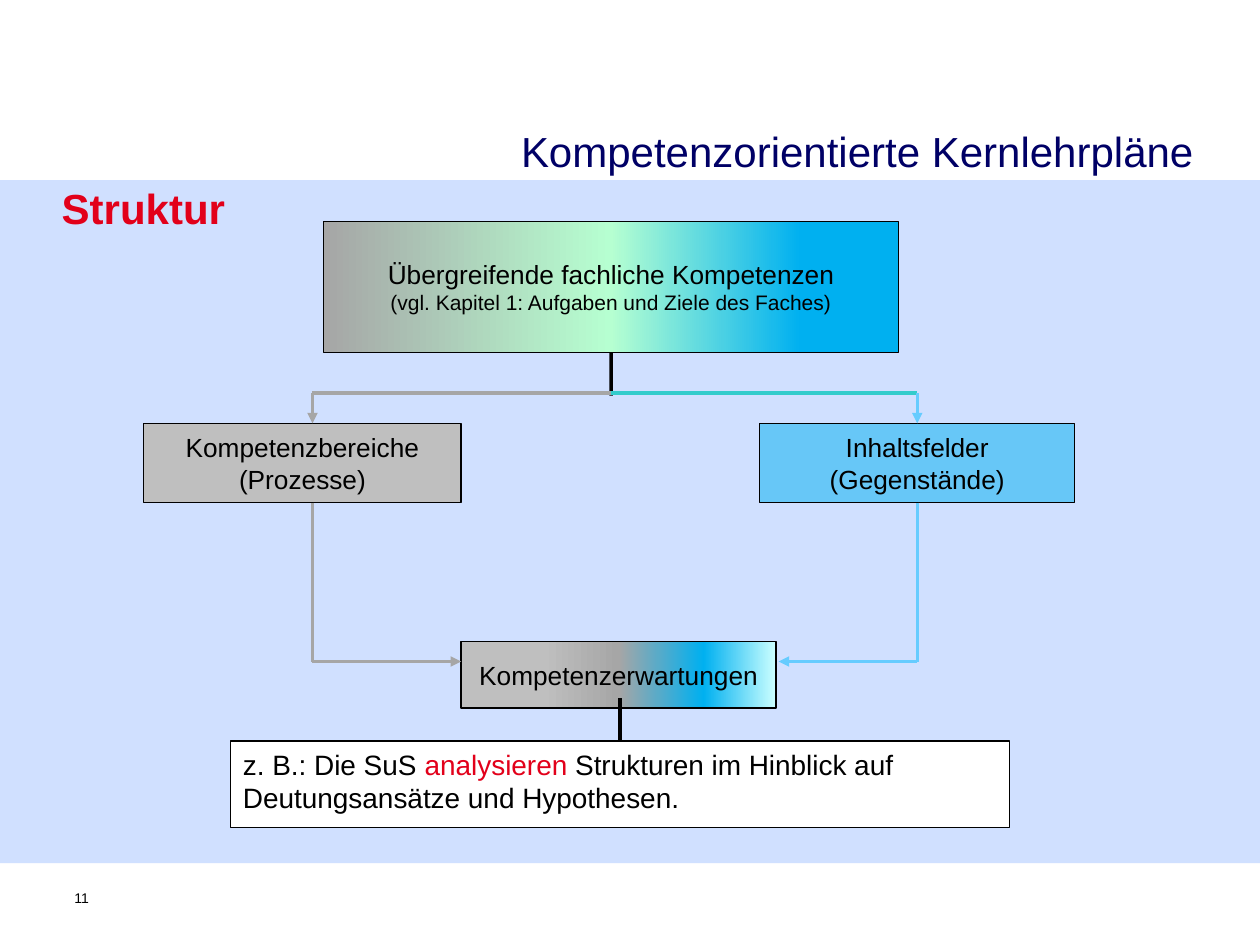
"""Build the slide on the structure of competence-oriented core curricula."""
from lxml import etree
from pptx import Presentation
from pptx.dml.color import RGBColor
from pptx.enum.shapes import MSO_CONNECTOR as Connector, MSO_SHAPE as Shape
from pptx.enum.text import MSO_ANCHOR as Anchor, PP_ALIGN as Align
from pptx.oxml import parse_xml
from pptx.oxml.ns import nsdecls, qn
from pptx.util import Inches, Pt

BLACK, WHITE, RED, NAVY = "000000", "FFFFFF", "E2001A", "000066"
GREY, SILVER, SKY, TEAL, BLUE = "A6A6A6", "BFBFBF", "66CCFF", "33CCCC", "00B0F0"
LEFT_X, TRUNK_X, RIGHT_X, EXAMPLE_X = 2.48, 4.85, 7.28, 4.92
FORK_Y, AREA_Y, AREA_END, MERGE_Y = 3.12, 3.36, 3.99, 5.25
TOP, BOTTOM = 0, 2

BAND = ((0, 1.43, 10, 5.42), ("6699FF", 30))

# name: (position, fill, anchor, alignment, top inset, paragraphs of (text, size, colour) runs)
BOXES = {
    "overall": ((2.57, 1.76, 4.56, 1.04), [(0, GREY), (50, "B6FFD1"), (83, BLUE)],
                Anchor.TOP, Align.CENTER, 0.29,
                [[("Übergreifende fachliche Kompetenzen", 15, BLACK)],
                 [("(vgl. Kapitel 1: Aufgaben und Ziele des Faches)", 12, BLACK)]]),
    "processes": ((1.14, AREA_Y, 2.52, AREA_END - AREA_Y), (SILVER, 100),
                  Anchor.MIDDLE, Align.CENTER, 0.05,
                  [[("Kompetenzbereiche", 15, BLACK)], [("(Prozesse)", 15, BLACK)]]),
    "contents": ((6.03, AREA_Y, 2.5, AREA_END - AREA_Y), (BLUE, 50),
                 Anchor.MIDDLE, Align.CENTER, 0.05,
                 [[("Inhaltsfelder", 15, BLACK)], [("(Gegenstände)", 15, BLACK)]]),
    "expectations": ((3.66, 5.09, 2.5, 0.53),
                     [(0, SILVER), (26, SILVER), (50, GREY), (77, BLUE), (100, "CCFFFF")],
                     Anchor.MIDDLE, Align.CENTER, 0.05,
                     [[("Kompetenzerwartungen", 15, BLACK)]]),
    "example": ((1.83, 5.88, 6.18, 0.69), (WHITE, 100), Anchor.TOP, Align.LEFT, 0.05,
                [[("z. B.: Die SuS ", 16, BLACK), ("analysieren ", 16, RED),
                  ("Strukturen im Hinblick auf Deutungsansätze und Hypothesen.", 16, BLACK)]]),
}

# (position, anchor, alignment, inset, bold, run)
LABELS = [
    ((0.49, 1.41, 8.66, 0.47), Anchor.MIDDLE, Align.LEFT, 0, True, ("Struktur", 24, RED)),
    ((3.54, 0.95, 6.03, 0.51), Anchor.TOP, Align.RIGHT, 0.1, False,
     ("Kompetenzorientierte Kernlehrpläne", 24, NAVY)),
    ((0.59, 7.06, 0.32, 0.37), Anchor.TOP, Align.LEFT, 0, False, ("11", 8, BLACK)),
]

# (start, end, colour, arrow, joined start, joined end)
LINES = [
    ((TRUNK_X, 2.8), (TRUNK_X, 3.14), BLACK, False, ("overall", BOTTOM), None),
    ((TRUNK_X, FORK_Y), (LEFT_X, FORK_Y), GREY, False, None, None),
    ((TRUNK_X, FORK_Y), (RIGHT_X, FORK_Y), TEAL, False, None, None),
    ((LEFT_X, FORK_Y), (LEFT_X, AREA_Y), GREY, True, None, None),
    ((RIGHT_X, FORK_Y), (RIGHT_X, AREA_Y), SKY, True, None, ("contents", TOP)),
    ((LEFT_X, AREA_END), (LEFT_X, MERGE_Y), GREY, False, None, None),
    ((RIGHT_X, AREA_END), (RIGHT_X, MERGE_Y), SKY, False, ("contents", BOTTOM), None),
    ((LEFT_X, MERGE_Y), (3.66, MERGE_Y), GREY, True, None, None),
    ((RIGHT_X, MERGE_Y), (6.18, MERGE_Y), SKY, True, None, None),
    ((EXAMPLE_X, 5.54), (EXAMPLE_X, 5.88), BLACK, False, None, ("example", TOP)),
]


def rgb(value):
    return RGBColor.from_string(value)


def inches(values):
    return [Inches(value) for value in values]


def write(frame, paragraphs, anchor, align, side, top, bold=False):
    frame.word_wrap = True
    frame.vertical_anchor = anchor
    frame.margin_left = frame.margin_right = Inches(side)
    frame.margin_top, frame.margin_bottom = Inches(top), Inches(min(top, 0.05))
    for index, runs in enumerate(paragraphs):
        paragraph = frame.add_paragraph() if index else frame.paragraphs[0]
        paragraph.alignment = align
        for text, size, colour in runs:
            run = paragraph.add_run()
            run.text = text
            run.font.name, run.font.size, run.font.bold = "Arial", Pt(size), bold
            run.font.color.rgb = rgb(colour)


def paint(shape, fill):
    if isinstance(fill, list):
        stops = "".join(f'<a:gs pos="{position * 1000}"><a:srgbClr val="{colour}"/></a:gs>'
                        for position, colour in fill)
        gradient = parse_xml(f'<a:gradFill {nsdecls("a")} rotWithShape="1"><a:gsLst>{stops}'
                             '</a:gsLst><a:lin ang="0" scaled="1"/></a:gradFill>')
        shape._element.spPr.find(qn("a:prstGeom")).addnext(gradient)
        return
    colour, opacity = fill
    shape.fill.solid()
    shape.fill.fore_color.rgb = rgb(colour)
    if opacity < 100:
        tint = shape._element.spPr.find(qn("a:solidFill"))[0]
        etree.SubElement(tint, qn("a:alpha")).set("val", str(opacity * 1000))


def add_box(shapes, position, fill):
    box = shapes.add_shape(Shape.RECTANGLE, *inches(position))
    box.shadow.inherit = False
    paint(box, fill)
    return box


def add_line(shapes, boxes, start, end, colour, arrow, source, target):
    line = shapes.add_connector(Connector.STRAIGHT, *inches(start + end))
    if source:
        line.begin_connect(boxes[source[0]], source[1])
    if target:
        line.end_connect(boxes[target[0]], target[1])
    line.line.color.rgb = rgb(colour)
    line.line.width = Pt(2)
    if arrow:
        etree.SubElement(line.line._get_or_add_ln(), qn("a:tailEnd")).set("type", "triangle")
    etree.SubElement(line._element.spPr, qn("a:effectLst"))


def main():
    deck = Presentation()
    deck.slide_width, deck.slide_height = inches((10, 7.5))
    shapes = deck.slides.add_slide(deck.slide_layouts[6]).shapes

    add_box(shapes, *BAND).line.fill.background()
    boxes = {}
    for name, (position, fill, anchor, align, top, paragraphs) in BOXES.items():
        box = boxes[name] = add_box(shapes, position, fill)
        box.line.color.rgb = rgb(BLACK)
        box.line.width = Pt(0.75)
        write(box.text_frame, paragraphs, anchor, align, 0.1, top)
    for line in LINES:
        add_line(shapes, boxes, *line)
    for position, anchor, align, inset, bold, run in LABELS:
        label = shapes.add_textbox(*inches(position))
        write(label.text_frame, [[run]], anchor, align, inset, inset / 2, bold)

    deck.save("out.pptx")


if __name__ == "__main__":
    main()
